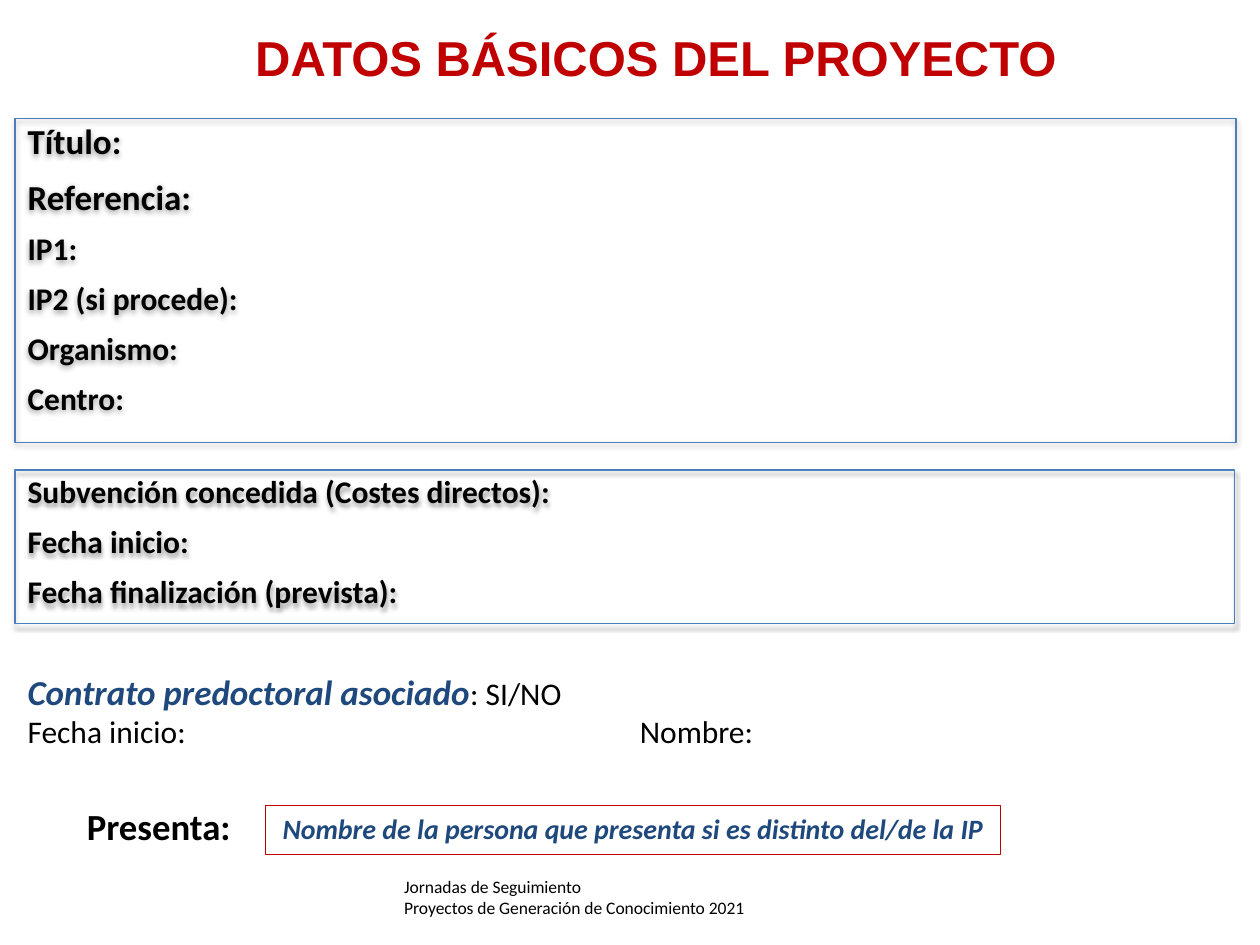
from dataclasses import dataclass

from lxml import etree
from pptx import Presentation
from pptx import util as u
from pptx.dml.color import RGBColor
from pptx.enum import shapes, text
from pptx.oxml.ns import qn


@dataclass(frozen=True)
class Theme:
    body: str = "Calibri"
    heading: str = "Arial"
    black: str = "000000"
    red: str = "C00000"
    navy: str = "1F497D"
    blue: str = "4B7EBC"
    title: int = 28
    presenter: int = 21
    large: int = 20
    normal: int = 18
    name: int = 16
    footer: int = 10


class Slide:
    def __init__(self, prs, theme):
        self.t = theme
        self.s = prs.slides.add_slide(prs.slide_layouts[6])

    def style(self, font, size, color=None, bold=False, italic=False, face=None):
        font.name = face or self.t.body
        font.size = u.Pt(size)
        font.bold = bold
        font.italic = italic
        font.color.rgb = RGBColor.from_string(color or self.t.black)

    def fill_text(self, tf, lines, align=text.PP_ALIGN.LEFT, **look):
        tf.word_wrap = True
        tf.vertical_anchor = text.MSO_ANCHOR.TOP
        for i, (words, size) in enumerate(lines):
            p = tf.add_paragraph() if i else tf.paragraphs[0]
            p.text = words
            p.alignment = align
            self.style(p.font, size, **look)

    def label(self, box, lines, **look):
        sp = self.s.shapes.add_textbox(*map(u.Inches, box))
        self.fill_text(sp.text_frame, lines, **look)
        return sp

    def frame(self, box, lines, line, **look):
        sp = self.s.shapes.add_shape(shapes.MSO_SHAPE.RECTANGLE, *map(u.Inches, box))
        sp.shadow.inherit = False
        sp.fill.background()
        sp.line.color.rgb = RGBColor.from_string(line)
        sp.line.width = u.Pt(0.75)
        self.fill_text(sp.text_frame, lines, **look)
        return sp

    def field_panel(self, box, lines):
        sp = self.frame(box, lines, self.t.blue, bold=True)
        for i, p in enumerate(sp.text_frame.paragraphs):
            p.line_spacing = 0.9
            p.space_before = u.Pt(lines[i][1] / 2 if i else 0)
        effects = sp._element.spPr.find(qn("a:effectLst"))
        shadow = etree.SubElement(effects, qn("a:outerShdw"), blurRad=str(u.Pt(3.1)),
                                  dist=str(u.Pt(1.6)), dir="5400000", rotWithShape="0")
        color = etree.SubElement(shadow, qn("a:srgbClr"), val=self.t.black)
        etree.SubElement(color, qn("a:alpha"), val="38000")

    def contract(self, box, heading, answer, fields, tab):
        tf = self.s.shapes.add_textbox(*map(u.Inches, box)).text_frame
        tf.word_wrap = True
        p = tf.paragraphs[0]
        r = p.add_run()
        r.text = heading
        self.style(r.font, self.t.large, self.t.navy, bold=True, italic=True)
        r = p.add_run()
        r.text = answer
        self.style(r.font, self.t.normal)
        p = tf.add_paragraph()
        p.text = "\t".join(fields)
        tabs = etree.SubElement(p._p.get_or_add_pPr(), qn("a:tabLst"))
        etree.SubElement(tabs, qn("a:tab"), pos=str(u.Inches(tab)), algn="l")
        self.style(p.font, self.t.normal)


def main():
    prs = Presentation()
    prs.slide_width, prs.slide_height = u.Inches(10), u.Inches(7.5)
    t = Theme()
    s = Slide(prs, t)
    center = text.PP_ALIGN.CENTER

    s.label((3.11, 6.9, 3.53, 0.44),
            [("Jornadas de Seguimiento", t.footer),
             ("Proyectos de Generación de Conocimiento 2021", t.footer)])
    s.field_panel((0.12, 0.94, 9.69, 2.57),
                  [("Título:", t.large), ("Referencia:", t.large),
                   ("IP1:", t.normal), ("IP2 (si procede):", t.normal),
                   ("Organismo:", t.normal), ("Centro:", t.normal)])
    s.field_panel((0.12, 3.73, 9.68, 1.22),
                  [("Subvención concedida (Costes directos):", t.normal),
                   ("Fecha inicio:", t.normal),
                   ("Fecha finalización (prevista):", t.normal)])
    presenter = s.label((0.59, 6.33, 1.55, 0.45), [("Presenta:", t.presenter)], bold=True)
    name = s.frame((2.11, 6.39, 5.83, 0.39),
                   [("Nombre de la persona que presenta si es distinto del/de la IP", t.name)],
                   t.red, align=center, color=t.navy, bold=True, italic=True)
    s.s.shapes.add_group_shape([presenter, name])
    s.label((1.77, 0.17, 6.87, 0.57), [("DATOS BÁSICOS DEL PROYECTO", t.title)],
            align=center, color=t.red, bold=True, face=t.heading)
    s.contract((0.12, 5.27, 9.68, 0.74), "Contrato predoctoral asociado", ": SI/NO",
               ("Fecha inicio:", "Nombre:"), 4.86)

    prs.save("out.pptx")


if __name__ == "__main__":
    main()
